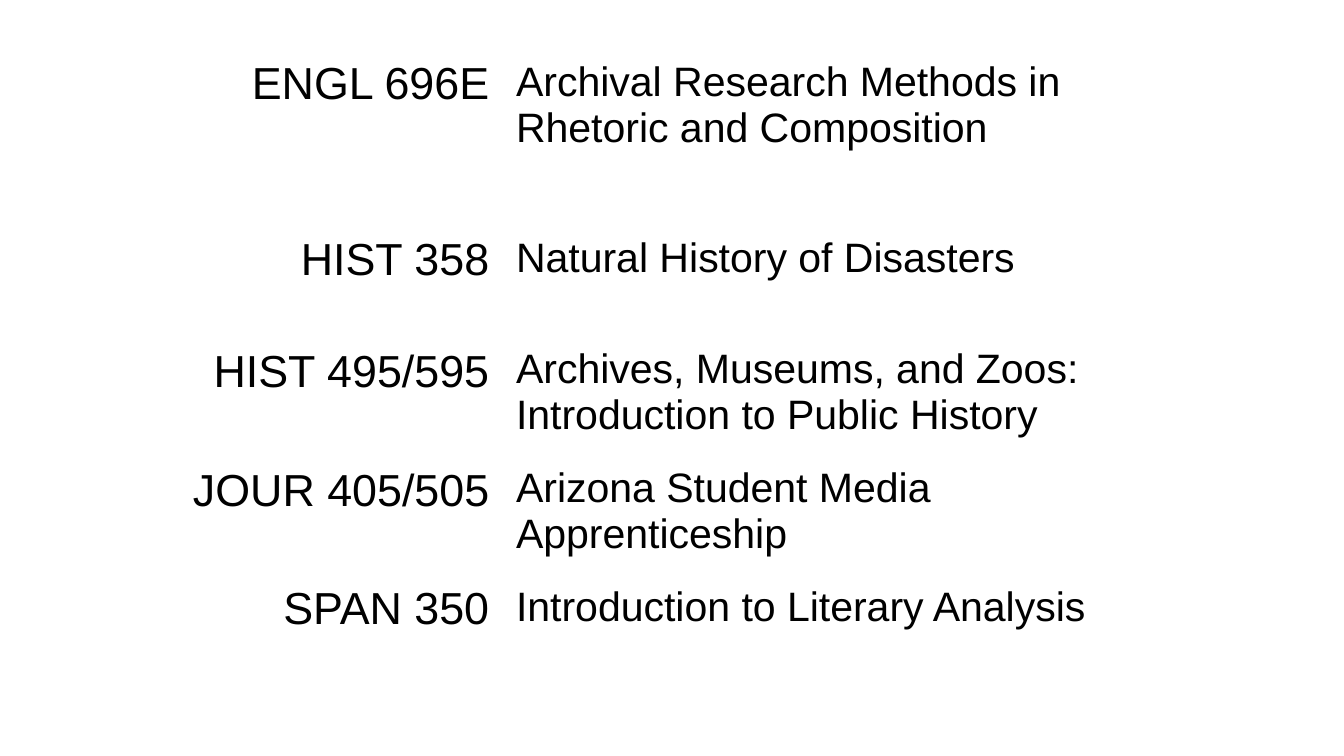
from typing import NamedTuple

import pptx
import pptx.dml.color
import pptx.enum.text
import pptx.util

Inches = pptx.util.Inches
Pt = pptx.util.Pt
Align = pptx.enum.text.PP_ALIGN

BLACK = pptx.dml.color.RGBColor(0x00, 0x00, 0x00)
FONT = "Arial"
CODE_WIDTH, TITLE_WIDTH = 4.43, 5.15
MARGIN = Inches(0.1)


class Course(NamedTuple):
    code: str
    title: str
    height: float = 0.83


COURSES = [
    Course("ENGL 696E", "Archival Research Methods in Rhetoric and Composition", 1.31),
    Course("HIST 358", "Natural History of Disasters"),
    Course("HIST 495/595", "Archives, Museums, and Zoos: Introduction to Public History"),
    Course("JOUR 405/505", "Arizona Student Media Apprenticeship"),
    Course("SPAN 350", "Introduction to Literary Analysis"),
]


def fill_cell(cell, text: str, size: int, alignment: Align) -> None:
    cell.fill.background()
    cell.margin_left = cell.margin_right = MARGIN
    cell.margin_top = cell.margin_bottom = MARGIN
    cell.text_frame.text = text
    paragraph = cell.text_frame.paragraphs[0]
    paragraph.alignment = alignment
    font = paragraph.runs[0].font
    font.name = FONT
    font.size = Pt(size)
    font.color.rgb = BLACK


def add_course_list(slide, courses: list[Course]) -> None:
    course_list = slide.shapes.add_table(
        len(courses), 2, Inches(-0.69), Inches(0.34),
        Inches(CODE_WIDTH + TITLE_WIDTH),
        Inches(sum(course.height for course in courses)),
    ).table
    course_list.first_row = False
    course_list.horz_banding = False
    course_list.columns[0].width = Inches(CODE_WIDTH)
    course_list.columns[1].width = Inches(TITLE_WIDTH)
    for index, course in enumerate(courses):
        course_list.rows[index].height = Inches(course.height)
        fill_cell(course_list.cell(index, 0), course.code, 24, Align.RIGHT)
        fill_cell(course_list.cell(index, 1), course.title, 22, Align.LEFT)


def main() -> None:
    presentation = pptx.Presentation()
    presentation.slide_width = Inches(10)
    presentation.slide_height = Inches(10) * 9 // 16
    slide = presentation.slides.add_slide(presentation.slide_layouts[6])
    add_course_list(slide, COURSES)
    presentation.save("out.pptx")


if __name__ == "__main__":
    main()
